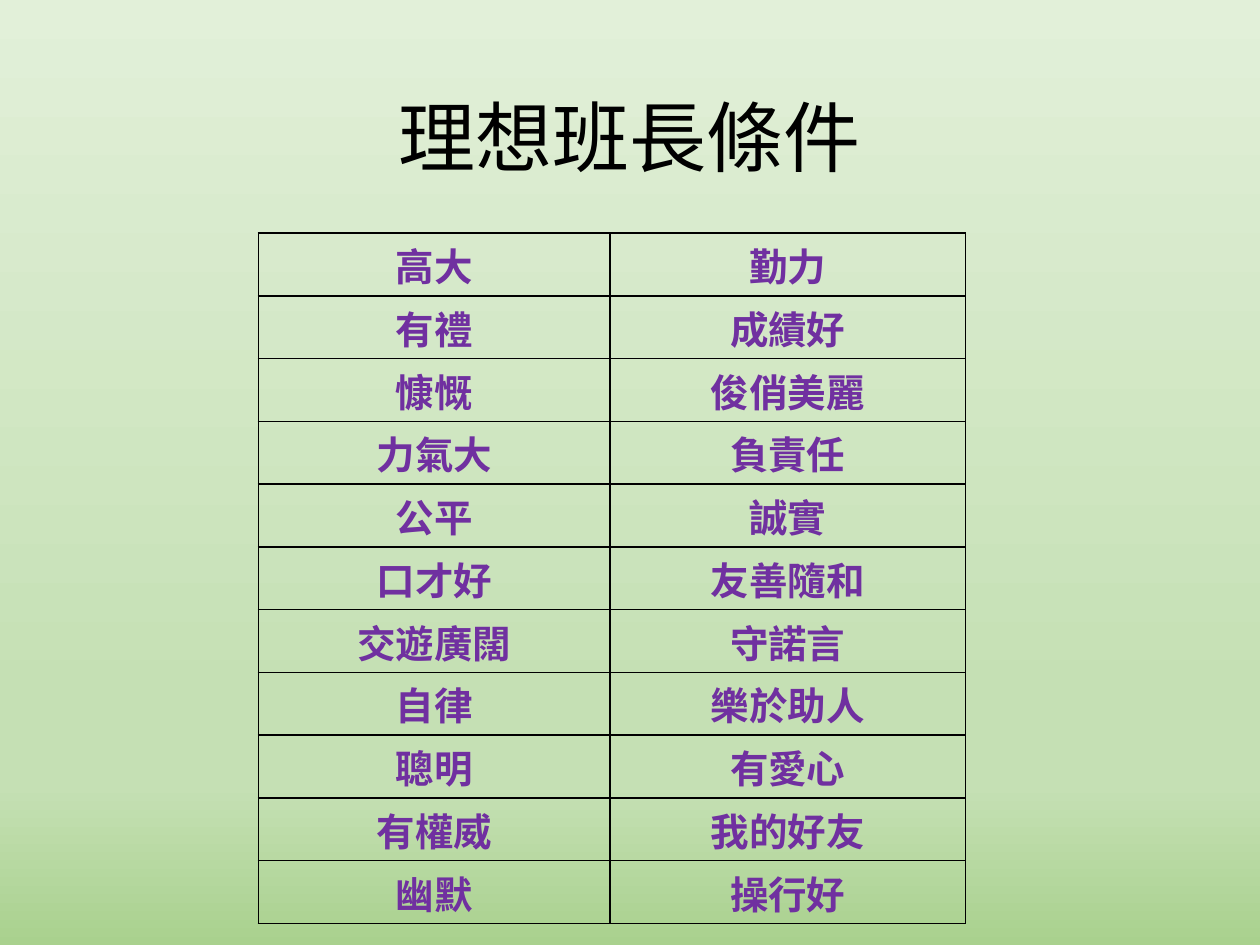
from lxml import etree
from pptx import Presentation
from pptx.dml.color import RGBColor
from pptx.enum.text import MSO_ANCHOR, PP_ALIGN
from pptx.oxml.ns import qn
from pptx.util import Cm, Pt

CENTER = PP_ALIGN.CENTER
MIDDLE = MSO_ANCHOR.MIDDLE

TITLE = "理想班長條件"
QUALITIES = [
    ("高大", "勤力"),
    ("有禮", "成績好"),
    ("慷慨", "俊俏美麗"),
    ("力氣大", "負責任"),
    ("公平", "誠實"),
    ("口才好", "友善隨和"),
    ("交遊廣闊", "守諾言"),
    ("自律", "樂於助人"),
    ("聰明", "有愛心"),
    ("有權威", "我的好友"),
    ("幽默", "操行好"),
]
COLORS = {"title": "000000", "border": "000000", "text": "7030A0",
          "pale": "E2F0D9", "light": "C5E0B4", "green": "A9D18E"}
GRADIENT = [(0, "pale"), (74, "light"), (83, "light"), (100, "green")]
FONT = "Calibri"
COLUMN_WIDTHS = [Cm(7.09), Cm(7.16)]
TABLE_HEIGHT = Cm(13.92)


def add_color(parent, name):
    etree.SubElement(parent, qn("a:srgbClr"), val=COLORS[name])


def set_background(s):
    fill = s.background.fill
    fill.gradient()
    fill.gradient_angle = 270
    stops = s.element.find(".//" + qn("a:gsLst"))
    for stop in list(stops):
        stops.remove(stop)
    for percent, name in GRADIENT:
        add_color(etree.SubElement(stops, qn("a:gs"), pos=str(percent * 1000)), name)


def write(tf, text, size, color, spacing, bold=False):
    p = tf.paragraphs[0]
    p.alignment = CENTER
    p.line_spacing = spacing
    r = p.add_run()
    r.text = text
    r.font.name = FONT
    r.font.size = Pt(size)
    r.font.bold = bold
    r.font.color.rgb = RGBColor.from_string(COLORS[color])


def set_borders(cell):
    tc_pr = cell._tc.get_or_add_tcPr()
    for i, side in enumerate(("lnL", "lnR", "lnT", "lnB")):
        ln = etree.Element(qn("a:" + side), w=str(Pt(1)))
        add_color(etree.SubElement(ln, qn("a:solidFill")), "border")
        tc_pr.insert(i, ln)


def add_qualities(s):
    frame = s.shapes.add_table(len(QUALITIES), len(COLUMN_WIDTHS), Cm(5.21), Cm(4.7),
                               sum(COLUMN_WIDTHS), TABLE_HEIGHT)
    table = frame.table
    table.first_row = table.horz_banding = False
    for column, width in zip(table.columns, COLUMN_WIDTHS):
        column.width = width
    for i, row in enumerate(QUALITIES):
        table.rows[i].height = TABLE_HEIGHT // len(QUALITIES)
        for j, text in enumerate(row):
            cell = table.cell(i, j)
            cell.margin_left = cell.margin_right = Cm(0.08)
            cell.margin_top = cell.margin_bottom = 0
            cell.fill.background()
            set_borders(cell)
            write(cell.text_frame, text, 22, "text", 1.07, bold=True)


def main():
    prs = Presentation()
    prs.slide_width, prs.slide_height = Cm(25.4), Cm(19.05)
    s = prs.slides.add_slide(prs.slide_layouts[5])
    set_background(s)
    title = s.shapes.title
    title.left, title.top, title.width, title.height = Cm(1.75), Cm(1.02), Cm(21.9), Cm(3.68)
    title.text_frame.vertical_anchor = MIDDLE
    write(title.text_frame, TITLE, 44, "title", 0.9)
    add_qualities(s)
    prs.save("out.pptx")


if __name__ == "__main__":
    main()
